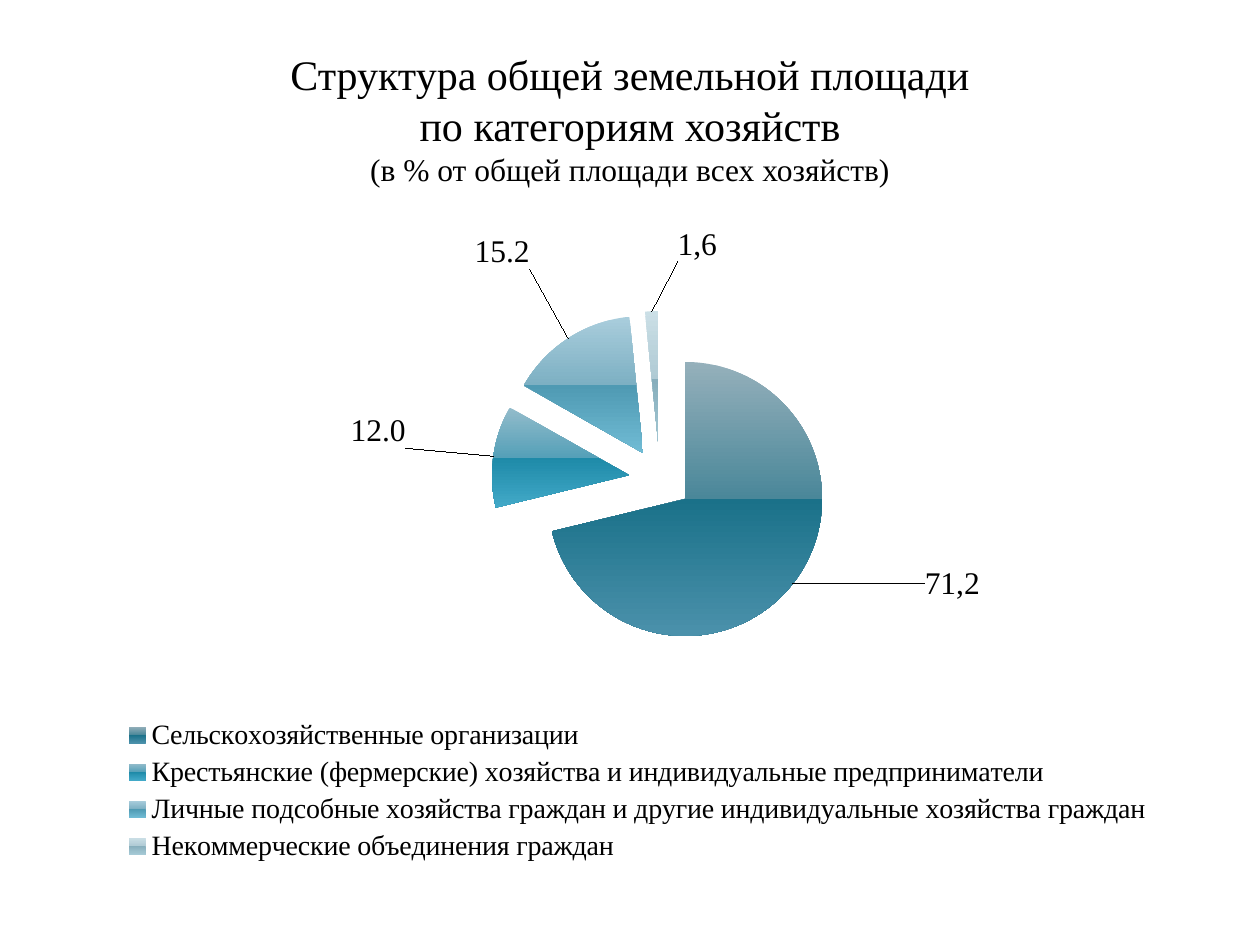
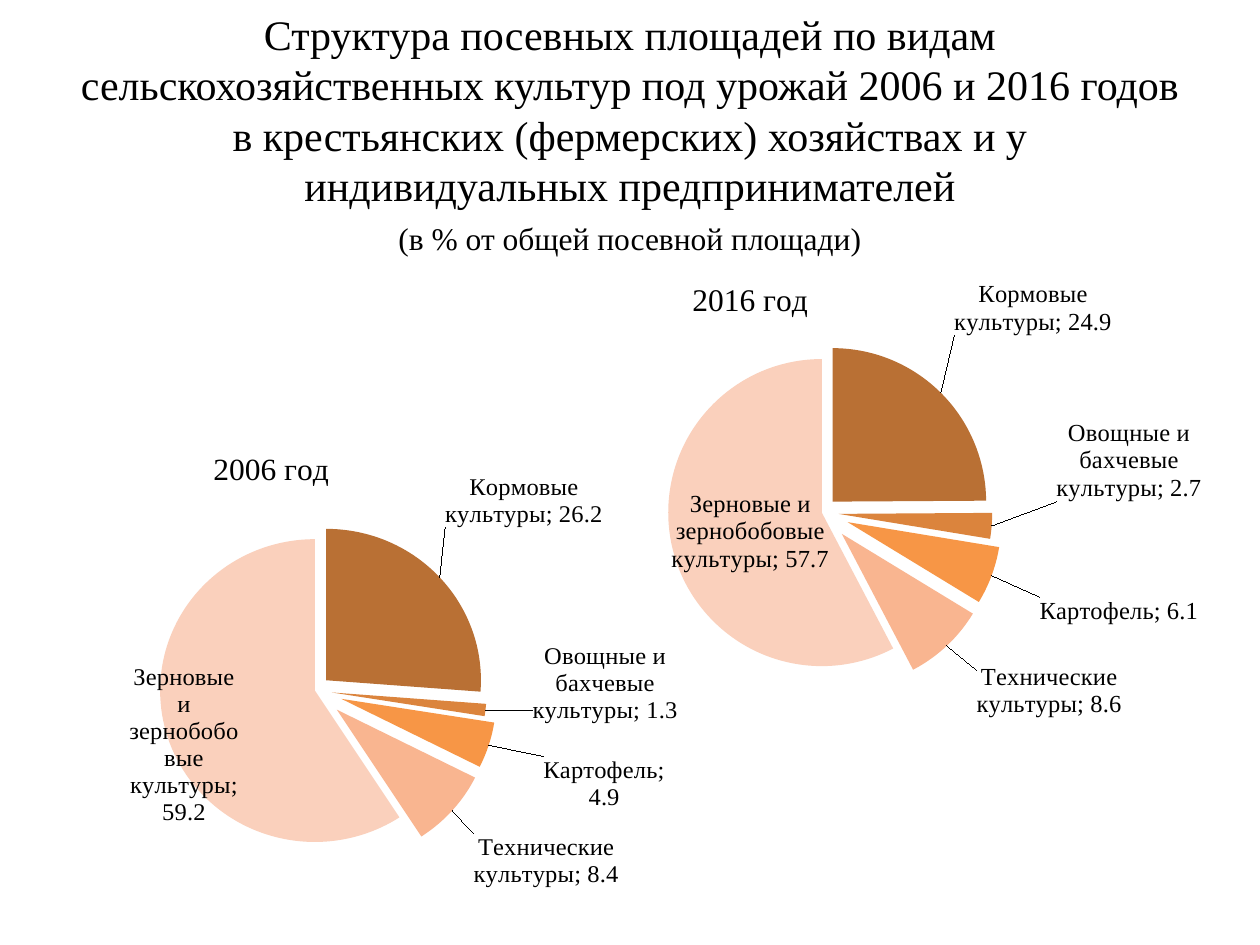
from dataclasses import dataclass

from lxml import etree
from pptx import Presentation
from pptx.chart.data import CategoryChartData
from pptx.dml.color import RGBColor
from pptx.enum.chart import XL_CHART_TYPE, XL_LABEL_POSITION, XL_LEGEND_POSITION
from pptx.enum.text import MSO_ANCHOR, MSO_AUTO_SIZE, PP_ALIGN
from pptx.oxml import parse_xml
from pptx.oxml.ns import nsdecls, qn
from pptx.util import Inches, Pt

PIE = XL_CHART_TYPE.PIE
PIE_BURST = XL_CHART_TYPE.PIE_EXPLODED
OUTER = XL_LABEL_POSITION.OUTSIDE_END
TOP = XL_LEGEND_POSITION.TOP
CENTER = PP_ALIGN.CENTER
ANCHOR = MSO_ANCHOR.MIDDLE
NO_FIT = MSO_AUTO_SIZE.NONE
TITLE_ONLY = 5


@dataclass(frozen=True)
class Theme:
    font: str = "Times New Roman"
    ink: str = "000000"
    head: int = 24
    sub: int = 18
    key: int = 16
    label: int = 14
    # Each slice fades twice: upper half, then lower half
    teal: tuple = (
        ("95B0BB", "4A8799", "1A7189", "4B91AB"),
        ("93BCCB", "55A0B8", "1E8AA8", "42A9C8"),
        ("A9CDDC", "7DB0C3", "4F9AB3", "70BBD4"),
        ("CBDFE6", "AFCAD4", "87AEBC", "A6CAD6"),
    )
    earth: tuple = ("B97034", "DB843D", "F79646", "F9B590", "FAD0BC")


@dataclass
class Slice:
    name: str
    value: float
    shift: tuple
    burst: int = 0
    text: str = ""


def place(node, index, **edges):
    """Give a chart part a manual layout in shares of the chart."""
    old = node.find(qn("c:layout"))
    if old is not None:
        node.remove(old)
    layout = etree.Element(qn("c:layout"))
    manual = etree.SubElement(layout, qn("c:manualLayout"))
    for tag, val in edges.items():
        etree.SubElement(manual, qn("c:" + tag)).set("val", str(val))
    node.insert(index, layout)


def edge_box(x, y, w=None, h=None):
    box = dict(xMode="edge", yMode="edge", x=x, y=y)
    return box if w is None else box | dict(w=w, h=h)


def fade(tones):
    """Return a downward gradient with a sharp break halfway."""
    stops = "".join(
        f'<a:gs pos="{pos}"><a:srgbClr val="{tone}"/></a:gs>'
        for pos, tone in zip((0, 50000, 50000, 100000), tones))
    return parse_xml(f'<a:gradFill {nsdecls("a")} rotWithShape="1"><a:gsLst>{stops}'
                     '</a:gsLst><a:lin ang="5400000" scaled="0"/></a:gradFill>')


class Deck:
    def __init__(self, theme):
        self.theme = theme
        self.prs = Presentation()
        self.prs.slide_width, self.prs.slide_height = Inches(10), Inches(7.5)
        self.slide = None

    def box(self, x, y, w, h):
        """Turn shares of the slide into lengths."""
        wide, high = self.prs.slide_width, self.prs.slide_height
        return int(x * wide), int(y * high), int(w * wide), int(h * high)

    def style(self, font, size):
        font.name, font.size, font.bold = self.theme.font, Pt(size), False
        font.color.rgb = RGBColor.from_string(self.theme.ink)

    def start(self, head, sub, area, gap=0):
        layout = self.prs.slide_layouts[TITLE_ONLY]
        self.slide = self.prs.slides.add_slide(layout)
        title = self.slide.shapes.title
        title.left, title.top, title.width, title.height = self.box(*area)
        frame = title.text_frame
        frame.auto_size, frame.vertical_anchor = NO_FIT, ANCHOR
        frame.text = head
        note = frame.add_paragraph()
        note.text, note.space_before = sub, Pt(gap)
        for para, size in zip(frame.paragraphs, (self.theme.head, self.theme.sub)):
            para.alignment = CENTER
            self.style(para.font, size)

    def pie(self, name, slices, area, plot, tones, size, kind=PIE):
        data = CategoryChartData(number_format="0.0")
        data.categories = [part.name for part in slices]
        data.add_series(name, [part.value for part in slices])
        chart = self.slide.shapes.add_chart(kind, *self.box(*area), data).chart
        self.style(chart.font, self.theme.sub)
        chart.has_title = chart.has_legend = False
        chart.plots[0].vary_by_categories = True
        place(chart._chartSpace.chart.plotArea, 0, layoutTarget="inner", **edge_box(*plot))
        series = chart.plots[0].series[0]
        labels = series.data_labels
        labels.show_value = True
        labels.number_format, labels.number_format_is_linked = "0.0", False
        self.style(labels.font, size)
        for i, (part, tone) in enumerate(zip(slices, tones)):
            point = series.points[i]
            self.paint(point, tone)
            self.burst(point, part.burst)
            self.label(point, part, size, kind == PIE)
        return chart

    def paint(self, point, tone):
        fill = point.format.fill
        if isinstance(tone, str):
            fill.solid()
            fill.fore_color.rgb = RGBColor.from_string(tone)
        else:
            fill.background()
            blank = point._element.xpath(f"c:dPt[c:idx/@val={point._idx}]/c:spPr/a:noFill")[0]
            blank.getparent().replace(blank, fade(tone))
        point.format.line.fill.background()

    def burst(self, point, share):
        dot = point._element.xpath(f"c:dPt[c:idx/@val={point._idx}]")[0]
        for old in dot.findall(qn("c:explosion")):
            dot.remove(old)
        node = etree.Element(qn("c:explosion"))
        node.set("val", str(share))
        dot.find(qn("c:spPr")).addprevious(node)

    def label(self, point, part, size, named):
        tag = point.data_label
        if part.text:
            tag.text_frame.text = part.text
            self.style(tag.text_frame.paragraphs[0].font, size)
        else:
            self.style(tag.font, size)
        tag.position = OUTER
        node = point._element.xpath(f"c:dLbls/c:dLbl[c:idx/@val={point._idx}]")[0]
        place(node, 1, x=part.shift[0], y=part.shift[1])
        if named:
            node.find(qn("c:showCatName")).set("val", "1")
            etree.SubElement(node, qn("c:separator")).text = "; "

    def caption(self, chart, text, x, y):
        chart.has_title = True
        title = chart.chart_title
        title.text_frame.text = text
        self.style(title.text_frame.paragraphs[0].font, self.theme.sub)
        place(title._element, 1, **edge_box(x, y))

    def legend(self, chart, *area):
        chart.has_legend = True
        legend = chart.legend
        legend.position, legend.include_in_layout = TOP, False
        self.style(legend.font, self.theme.key)
        place(legend._element, 1, **edge_box(*area))


CROPS = ("Кормовые культуры", "Овощные и бахчевые культуры", "Картофель",
         "Технические культуры", "Зерновые и зернобобовые культуры")
BURSTS = (10, 11, 18, 19, 0)

# year, values, label shifts, area on the slide, plot in the chart, caption place
YEARS = (
    ("2006 год", (26.2, 1.3, 4.9, 8.4, 59.2),
     ((0, -.1), (.05, -.15), (.06, .02), (.02, .04), (.1, -.16)),
     (.02, .46, .63, .49), (.17, .23, .39, .67), (.23, .02)),
    ("2016 год", (24.9, 2.7, 6.1, 8.6, 57.7),
     ((.01, -.11), (.07, -.14), (.05, .04), (.03, .04), (.2, -.13)),
     (.35, .26, .65, .5), (.25, .24, .43, .65), (.3, .06)),
)

FARMS = (
    Slice("Сельскохозяйственные организации", 71.2, (.11, -.03), 23, "71,2"),
    Slice("Крестьянские (фермерские) хозяйства и индивидуальные предприниматели",
          12, (-.07, -.01), 23),
    Slice("Личные подсобные хозяйства граждан и другие индивидуальные хозяйства граждан",
          15.2, (-.03, -.09), 23),
    Slice("Некоммерческие объединения граждан", 1.6, (.04, -.06), 23, "1,6"),
)


def main():
    theme = Theme()
    deck = Deck(theme)

    deck.start("Структура общей земельной площади\vпо категориям хозяйств",
               "(в % от общей площади всех хозяйств)", (.05, .04, .9, .17))
    land = deck.pie("Series 1", FARMS, (.06, .23, .91, .74), (.1, .13, .82, .49),
                    theme.teal, theme.sub, PIE_BURST)
    deck.legend(land, .03, .71, .92, .22)

    deck.start("Структура посевных площадей по видам сельскохозяйственных культур "
               "под урожай 2006 и 2016 годов в крестьянских (фермерских) хозяйствах "
               "и у индивидуальных предпринимателей",
               "(в % от общей посевной площади)", (.05, .05, .9, .18), 5)
    for year, values, shifts, area, plot, spot in YEARS:
        slices = [Slice(name, value, shift, burst) for name, value, shift, burst
                  in zip(CROPS, values, shifts, BURSTS)]
        chart = deck.pie(year, slices, area, plot, theme.earth, theme.label)
        deck.caption(chart, year, *spot)

    deck.prs.save("out.pptx")


if __name__ == "__main__":
    main()
